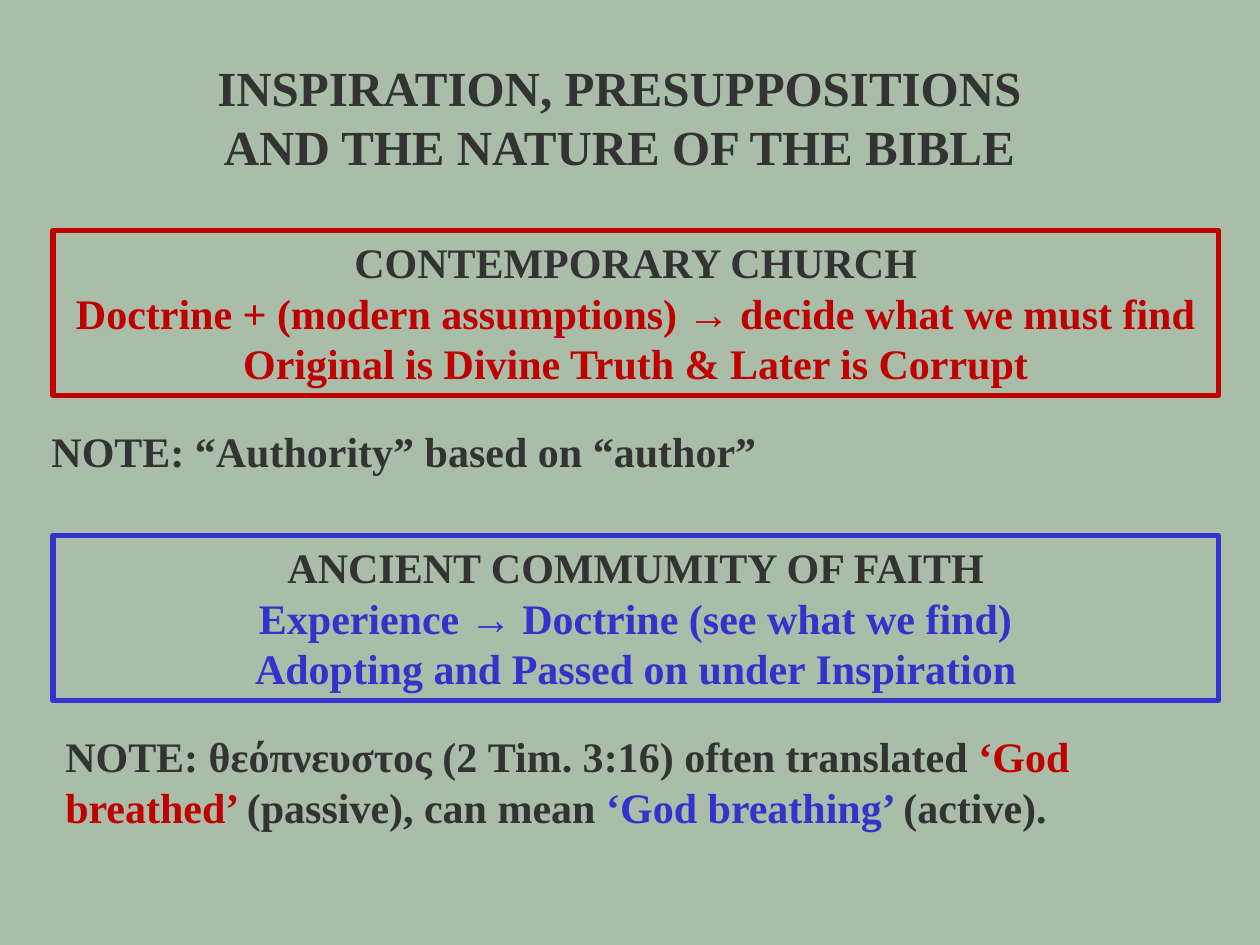
from pptx import Presentation
from pptx.dml.color import RGBColor
from pptx.enum.shapes import MSO_SHAPE
from pptx.enum.text import MSO_ANCHOR, MSO_AUTO_SIZE, PP_ALIGN
from pptx.util import Inches, Pt

FONT = "Times New Roman"
SAGE, DARK, RED, BLUE = "A9BDA9", "333333", "C00000", "3333CC"


def rgb(value):
    return RGBColor.from_string(value)


def write(tf, paragraphs, size=24, align=PP_ALIGN.LEFT):
    tf.word_wrap = True
    tf.auto_size = MSO_AUTO_SIZE.SHAPE_TO_FIT_TEXT
    tf.vertical_anchor = MSO_ANCHOR.TOP
    for i, runs in enumerate(paragraphs):
        p = tf.add_paragraph() if i else tf.paragraphs[0]
        p.alignment = align
        for text, color in runs:
            r = p.add_run()
            r.text = text
            r.font.name = FONT
            r.font.size = Pt(size)
            r.font.bold = True
            r.font.color.rgb = rgb(color)


def add_text(s, left, top, width, height, runs, **style):
    sp = s.shapes.add_textbox(Inches(left), Inches(top), Inches(width), Inches(height))
    write(sp.text_frame, [runs], **style)


def add_framed_box(s, top, color, heading, lines):
    sp = s.shapes.add_shape(
        MSO_SHAPE.RECTANGLE, Inches(0.42), Inches(top), Inches(9.25), Inches(1.31)
    )
    sp.shadow.inherit = False
    sp.fill.background()
    sp.line.color.rgb = rgb(color)
    sp.line.width = Pt(3)
    paragraphs = [[(heading, DARK)]] + [[(line, color)] for line in lines]
    write(sp.text_frame, paragraphs, align=PP_ALIGN.CENTER)


def main():
    prs = Presentation()
    prs.slide_width, prs.slide_height = Inches(10), Inches(7.5)
    s = prs.slides.add_slide(prs.slide_layouts[6])
    s.background.fill.solid()
    s.background.fill.fore_color.rgb = rgb(SAGE)

    title = "INSPIRATION, PRESUPPOSITIONS AND THE NATURE OF THE BIBLE"
    add_text(s, 1.25, 0.41, 7.33, 1.04, [(title, DARK)], size=28, align=PP_ALIGN.CENTER)
    add_framed_box(s, 1.83, RED, "CONTEMPORARY CHURCH", [
        "Doctrine + (modern assumptions) → decide what we must find",
        "Original is Divine Truth & Later is Corrupt",
    ])
    add_framed_box(s, 4.25, BLUE, "ANCIENT COMMUMITY OF FAITH", [
        "Experience → Doctrine (see what we find)",
        "Adopting and Passed on under Inspiration",
    ])
    add_text(s, 0.42, 5.75, 8.33, 0.91, [
        ("NOTE: θεόπνευστος (2 Tim. 3:16) often translated ", DARK),
        ("‘God breathed’ ", RED),
        ("(passive), can mean ", DARK),
        ("‘God breathing’ ", BLUE),
        ("(active).", DARK),
    ])
    add_text(s, 0.31, 3.33, 8.31, 0.5, [("NOTE: “Authority” based on “author”", DARK)])
    prs.save("out.pptx")


if __name__ == "__main__":
    main()
